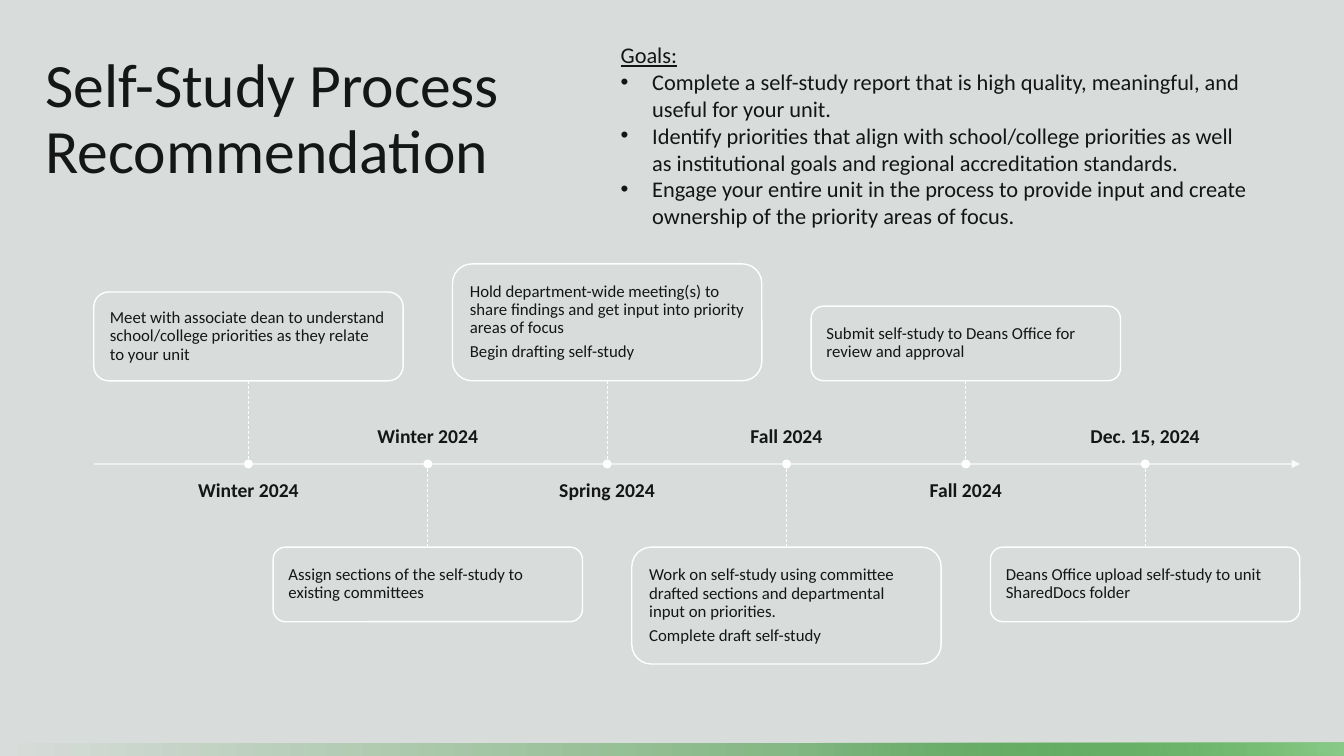
from pptx import Presentation, util as u
from pptx.dml.color import RGBColor
from pptx.enum import dml, shapes, text
from pptx.oxml.ns import qn
from lxml import etree

Pt = u.Pt
LEFT, CENTER = text.PP_ALIGN.LEFT, text.PP_ALIGN.CENTER
TOP, MIDDLE, BOTTOM = (text.MSO_ANCHOR.TOP, text.MSO_ANCHOR.MIDDLE,
                       text.MSO_ANCHOR.BOTTOM)


def rgb(hex_):
    return RGBColor.from_string(hex_)


def sub(parent, tag, **attrs):
    return etree.SubElement(parent, qn(tag), attrs)


def set_alpha(clr, percent):
    sub(clr, "a:alpha", val=str(percent * 1000))


def write(tf, lines, size, color, font, bold=False, align=LEFT, anchor=TOP,
          inset=None, spacing=1.0, after=0, underline_first=False, indent=0):
    """Fill a text frame; with indent, lines after the first are bullets."""
    tf.word_wrap = True
    tf.vertical_anchor = anchor
    if inset is not None:
        tf.margin_left = tf.margin_right = Pt(inset)
        tf.margin_top = tf.margin_bottom = Pt(inset)
    for i, line in enumerate(lines):
        p = tf.paragraphs[0] if i == 0 else tf.add_paragraph()
        p.alignment, p.line_spacing, p.space_after = align, spacing, Pt(after)
        if indent and i:
            pPr = p._p.get_or_add_pPr()
            pPr.set("marL", str(Pt(indent)))
            pPr.set("indent", str(-Pt(indent)))
            sub(pPr, "a:buFont", typeface="Arial")
            sub(pPr, "a:buChar", char="•")
        r = p.add_run()
        r.text = line
        r.font.name, r.font.size, r.font.bold = font, Pt(size), bold
        r.font.color.rgb = rgb(color)
        if underline_first and i == 0:
            r.font.underline = True


class Deck:
    FONT, INK, GOALS_INK = "Calibri", "151716", "141615"
    BACK, WHITE = "D8DCDA", "FFFFFF"

    def __init__(self):
        self.prs = Presentation()
        self.prs.slide_width, self.prs.slide_height = Pt(960), Pt(540)
        self.s = self.prs.slides.add_slide(self.prs.slide_layouts[6])
        fill = self.s.background.fill
        fill.solid()
        fill.fore_color.rgb = rgb(self.BACK)

    def shape(self, kind, x, y, w, h):
        sp = self.s.shapes.add_shape(kind, Pt(x), Pt(y), Pt(w), Pt(h))
        sp.shadow.inherit = False
        return sp

    def outlined(self, kind, x, y, w, h, fill):
        sp = self.shape(kind, x, y, w, h)
        sp.fill.solid()
        sp.fill.fore_color.rgb = rgb(fill)
        sp.line.color.rgb = rgb(self.WHITE)
        sp.line.width = Pt(1)
        return sp

    def band(self, x, y, w, h, stops):
        sp = self.shape(shapes.MSO_SHAPE.RECTANGLE, x, y, w, h)
        sp.line.fill.background()
        sp.fill.gradient()
        sp.fill.gradient_angle = 0
        for stop, (position, color, alpha) in zip(sp.fill.gradient_stops, stops):
            stop.position = position
            stop.color.rgb = rgb(color)
        for clr, (_, _, alpha) in zip(sp._element.spPr.iter(qn("a:srgbClr")), stops):
            if alpha < 100:
                set_alpha(clr, alpha)

    def text(self, x, y, w, h, lines, **fmt):
        sp = self.s.shapes.add_textbox(Pt(x), Pt(y), Pt(w), Pt(h))
        write(sp.text_frame, lines, **{"color": self.INK, "font": self.FONT, **fmt})

    def card(self, x, y, w, h, lines):
        sp = self.outlined(shapes.MSO_SHAPE.ROUNDED_RECTANGLE, x, y, w, h, self.BACK)
        set_alpha(sp._element.spPr.find(".//" + qn("a:srgbClr")), 90)
        write(sp.text_frame, lines, 12, self.INK, self.FONT, anchor=MIDDLE,
              inset=8.4, spacing=0.9, after=4.2)
        return sp

    def dot(self, cx, cy, d):
        self.outlined(shapes.MSO_SHAPE.OVAL, cx - d / 2, cy - d / 2, d, d, self.WHITE)

    def line(self, x1, y1, x2, y2, width, dashed=False, arrow=False):
        c = self.s.shapes.add_connector(shapes.MSO_CONNECTOR.STRAIGHT,
                                        Pt(x1), Pt(y1), Pt(x2), Pt(y2))
        c.line.color.rgb = rgb(self.WHITE)
        c.line.width = Pt(width)
        if dashed:
            c.line.dash_style = dml.MSO_LINE.DASH
        if arrow:
            ln = c.line._get_or_add_ln()
            set_alpha(ln.find(".//" + qn("a:srgbClr")), 90)
            sub(ln, "a:tailEnd", type="triangle")
        sub(c._element.spPr, "a:effectLst")
        return c


# Timeline entries, alternating above and below the axis: date, height, text
STEPS = [
    ("Winter 2024", 63.4, ["Meet with associate dean to understand school/college "
                           "priorities as they relate to your unit"]),
    ("Winter 2024", 53.3, ["Assign sections of the self-study to existing committees"]),
    ("Spring 2024", 83.5, ["Hold department-wide meeting(s) to share findings and get "
                           "input into priority areas of focus",
                           "Begin drafting self-study"]),
    ("Fall 2024", 83.5, ["Work on self-study using committee drafted sections and "
                         "departmental input on priorities.",
                         "Complete draft self-study"]),
    ("Fall 2024", 53.3, ["Submit self-study to Deans Office for review and approval"]),
    ("Dec. 15, 2024", 53.3, ["Deans Office upload self-study to unit SharedDocs folder"]),
]
AXIS_Y, FIRST_X, STEP_X = 331.4, 177.5, 128.1
CARD_W, CARD_GAP = 221, 59.4
LABEL_W, LABEL_H, LABEL_GAP = 194.4, 35.2, 11.6


def main():
    deck = Deck()

    # Green band along the bottom edge
    deck.band(0, 530.5, 960, 9.5, [(0, deck.BACK, 100), (1, "489D46", 100)])
    deck.band(494, 530.5, 466, 9.5, [(0.19, "489D46", 0), (1, "8BCB8A", 100)])

    # Title and goals
    deck.text(25.2, 33.1, 363.6, 105.8, ["Self-Study Process Recommendation"],
              size=44, anchor=MIDDLE, spacing=0.9)
    deck.text(436.3, 25.9, 465.8, 162.7, [
        "Goals:",
        "Complete a self-study report that is high quality, meaningful, and useful "
        "for your unit.",
        "Identify priorities that align with school/college priorities as well as "
        "institutional goals and regional accreditation standards.",
        "Engage your entire unit in the process to provide input and create "
        "ownership of the priority areas of focus.",
    ], size=16, color=deck.GOALS_INK, underline_first=True, indent=22.5)

    # Timeline
    deck.line(67, AXIS_Y, 928.6, AXIS_Y, 1, arrow=True)
    for i, (date, height, lines) in enumerate(STEPS):
        cx = FIRST_X + i * STEP_X
        above = i % 2 == 0
        card_y = AXIS_Y - CARD_GAP - height if above else AXIS_Y + CARD_GAP
        label_y = AXIS_Y + LABEL_GAP if above else AXIS_Y - LABEL_GAP - LABEL_H
        deck.text(cx - LABEL_W / 2, label_y, LABEL_W, LABEL_H, [date], size=14,
                  bold=True, align=CENTER, anchor=TOP if above else BOTTOM,
                  inset=0, spacing=0.9, after=4.9)
        card = deck.card(cx - CARD_W / 2, card_y, CARD_W, height, lines)
        edge_y = card_y + height if above else card_y
        stem = deck.line(cx, edge_y, cx, AXIS_Y, 0.5, dashed=True)
        stem.begin_connect(card, 2 if above else 0)
        deck.dot(cx, AXIS_Y, 5.3)

    deck.prs.save("out.pptx")


if __name__ == "__main__":
    main()
